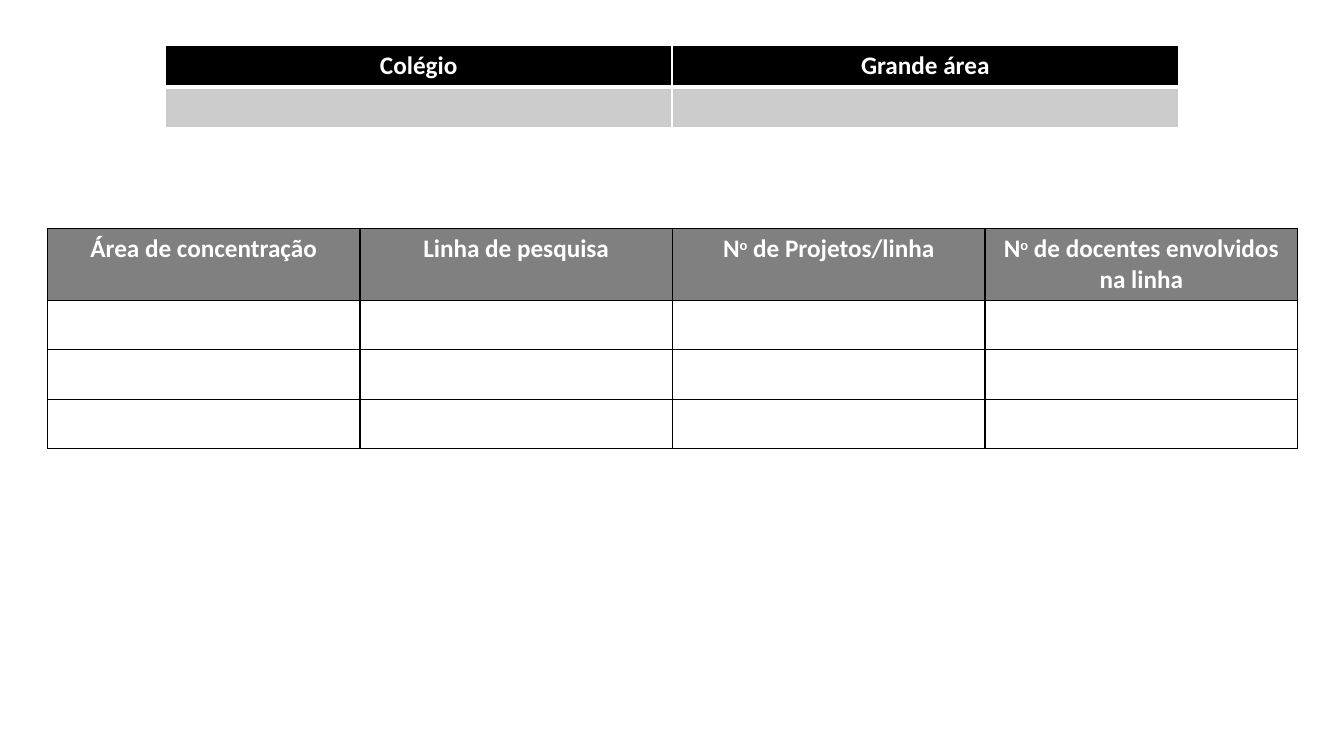
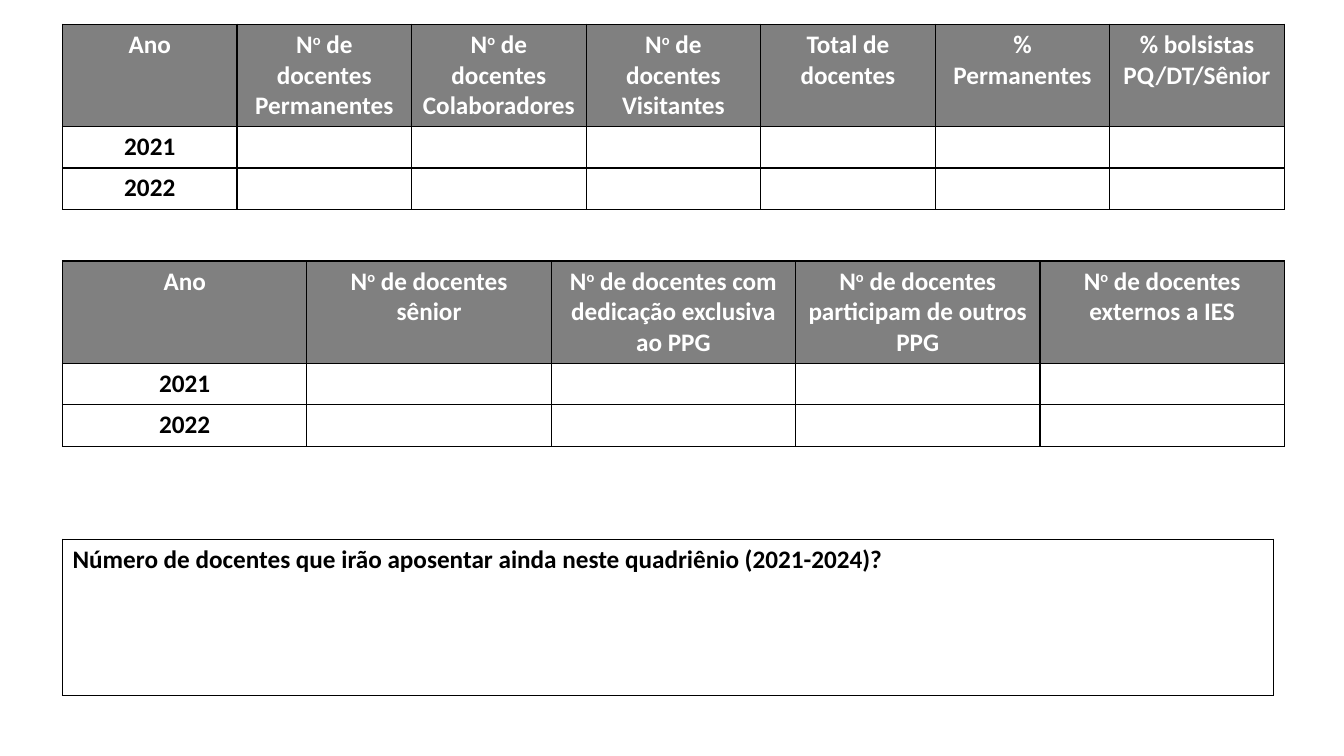
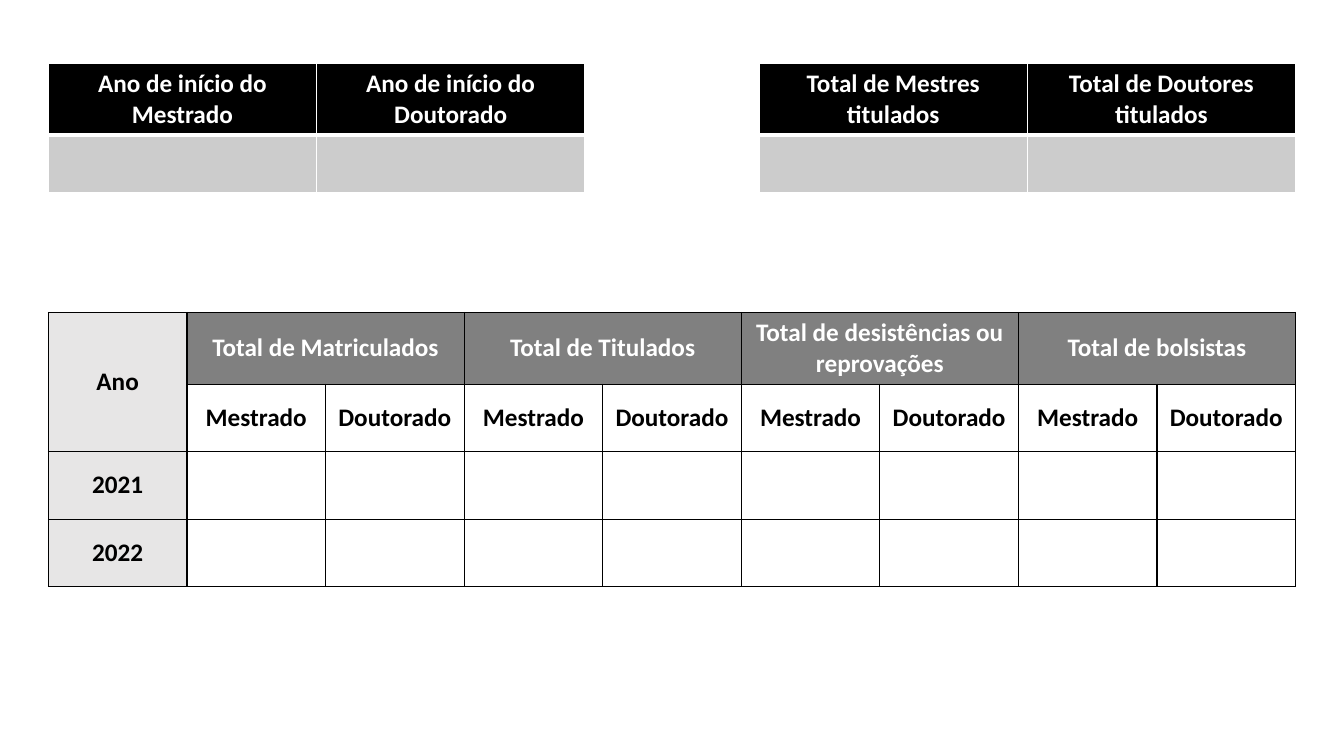
from lxml import etree
from pptx import Presentation
from pptx.dml.color import RGBColor
from pptx.enum.text import MSO_ANCHOR as Anchor, PP_ALIGN as Align
from pptx.oxml.ns import qn
from pptx.util import Inches, Pt

COLORS = {
    "black": "000000",
    "white": "FFFFFF",
    "header": "808080",
    "answer": "CCCCCC",
    "year": "E7E6E6",
}
FONT = "Calibri"
FONT_SIZE = 18
YEARS = ["2021", "2022"]
SIDES = ("lnL", "lnR", "lnT", "lnB")


def set_borders(cell, color, **widths):
    """Draw all four borders, 1 pt wide unless a side has its own width."""
    properties = cell._tc.get_or_add_tcPr()
    for side in SIDES:
        line = etree.SubElement(properties, qn(f"a:{side}"), w=str(Pt(widths.get(side, 1))))
        fill = etree.SubElement(line, qn("a:solidFill"))
        etree.SubElement(fill, qn("a:srgbClr"), val=COLORS[color])


def set_text(cell, text, color, align=Align.CENTER):
    """Write bold text; a leading "No" gets a raised "o"."""
    para = cell.text_frame.paragraphs[0]
    para.alignment = align
    parts = ["N", "o", text[2:]] if text.startswith("No ") else [text]
    for part in parts:
        span = para.add_run()
        span.text = part
        span.font.name = FONT
        span.font.size = Pt(FONT_SIZE)
        span.font.bold = True
        span.font.color.rgb = RGBColor.from_string(COLORS[color])
    if len(parts) > 1:
        para.runs[1]._r.get_or_add_rPr().set("baseline", "30000")


def style_cell(cell, fill="white", border="black", text="", color="black",
               align=Align.CENTER, **widths):
    set_borders(cell, border, **widths)
    cell.fill.solid()
    cell.fill.fore_color.rgb = RGBColor.from_string(COLORS[fill])
    if text:
        set_text(cell, text, color, align)


def add_grid(slide, left, top, width, heights, column_count):
    """Add a plain table with equal columns."""
    frame = slide.shapes.add_table(
        len(heights), column_count, Inches(left), Inches(top),
        Inches(width), Inches(sum(heights)))
    table = frame.table
    table.first_row = False
    table.horz_banding = False
    for column in table.columns:
        column.width = Inches(width / column_count)
    for row, height in zip(table.rows, heights):
        row.height = Inches(height)
    return table


def add_answer_table(slide, left, top, width, heights, headers):
    """Black headings over one grey row to fill in."""
    table = add_grid(slide, left, top, width, heights, len(headers))
    for column, header in enumerate(headers):
        style_cell(table.cell(0, column), "black", "white", header, "white", lnB=3)
        style_cell(table.cell(1, column), "answer", "white", lnT=3)


def add_form_table(slide, left, top, width, heights, headers, row_labels):
    """Grey headings over ruled rows, each with an optional label."""
    table = add_grid(slide, left, top, width, heights, len(headers))
    for column, header in enumerate(headers):
        style_cell(table.cell(0, column), "header", text=header, color="white")
        for row, label in enumerate(row_labels, 1):
            style_cell(table.cell(row, column), text=label if column == 0 else "")


def add_question_box(slide, left, top, width, height, question):
    table = add_grid(slide, left, top, width, [height], 1)
    style_cell(table.cell(0, 0), text=question, align=Align.LEFT)


def add_degree_table(slide, left, top, width, heights, groups, degrees):
    """Years down the side, each group of totals split by degree."""
    table = add_grid(slide, left, top, width, heights, 1 + len(groups) * len(degrees))
    year_labels = ["Ano", ""] + YEARS
    for row, label in enumerate(year_labels):
        style_cell(table.cell(row, 0), "year", text=label)
        for column in range(1, len(table.columns)):
            group, position = divmod(column - 1, len(degrees))
            cell = table.cell(row, column)
            if row == 0:
                title = groups[group] if position == 0 else ""
                style_cell(cell, "header", text=title, color="white")
            else:
                style_cell(cell, text=degrees[position] if row == 1 else "")
    for cell in table.iter_cells():
        cell.vertical_anchor = Anchor.MIDDLE
    table.cell(0, 0).merge(table.cell(1, 0))
    for first in range(1, len(table.columns), len(degrees)):
        table.cell(0, first).merge(table.cell(0, first + len(degrees) - 1))


def build_areas(slide):
    add_form_table(
        slide, 0.47, 2.27, 12.4, [0.71] + [0.49] * 3,
        ["Área de concentração", "Linha de pesquisa", "No de Projetos/linha",
         "No de docentes envolvidos na linha"],
        [""] * 3)
    add_answer_table(slide, 1.64, 0.45, 10.05, [0.41, 0.4], ["Colégio", "Grande área"])


def build_teachers(slide):
    left, width, heights = 0.62, 12.12, [1.01, 0.41, 0.41]
    add_form_table(
        slide, left, 0.24, width, heights,
        ["Ano", "No de docentes Permanentes", "No de docentes Colaboradores",
         "No de docentes Visitantes", "Total de docentes", "% Permanentes",
         "% bolsistas PQ/DT/Sênior"],
        YEARS)
    add_form_table(
        slide, left, 2.59, width, heights,
        ["Ano", "No de docentes sênior", "No de docentes com dedicação exclusiva ao PPG",
         "No de docentes participam de outros PPG", "No de docentes externos a IES"],
        YEARS)
    add_question_box(
        slide, left, 5.35, 12.01, 1.55,
        "Número de docentes que irão aposentar ainda neste quadriênio (2021-2024)?")


def build_students(slide):
    answer_tables = [
        (0.48, ["Ano de início do Mestrado", "Ano de início do Doutorado"]),
        (7.53, ["Total de Mestres titulados", "Total de Doutores titulados"]),
    ]
    for left, headers in answer_tables:
        add_answer_table(slide, left, 0.63, 5.32, [0.7, 0.57], headers)
    add_degree_table(
        slide, 0.48, 3.1, 12.37, [0.71] + [0.67] * 3,
        ["Total de Matriculados", "Total de Titulados",
         "Total de desistências ou reprovações", "Total de bolsistas"],
        ["Mestrado", "Doutorado"])


def main():
    deck = Presentation()
    deck.slide_width = Inches(13.33)
    deck.slide_height = Inches(7.5)
    blank_layout = deck.slide_layouts[6]
    for build in (build_areas, build_teachers, build_students):
        build(deck.slides.add_slide(blank_layout))
    deck.save("out.pptx")


if __name__ == "__main__":
    main()
